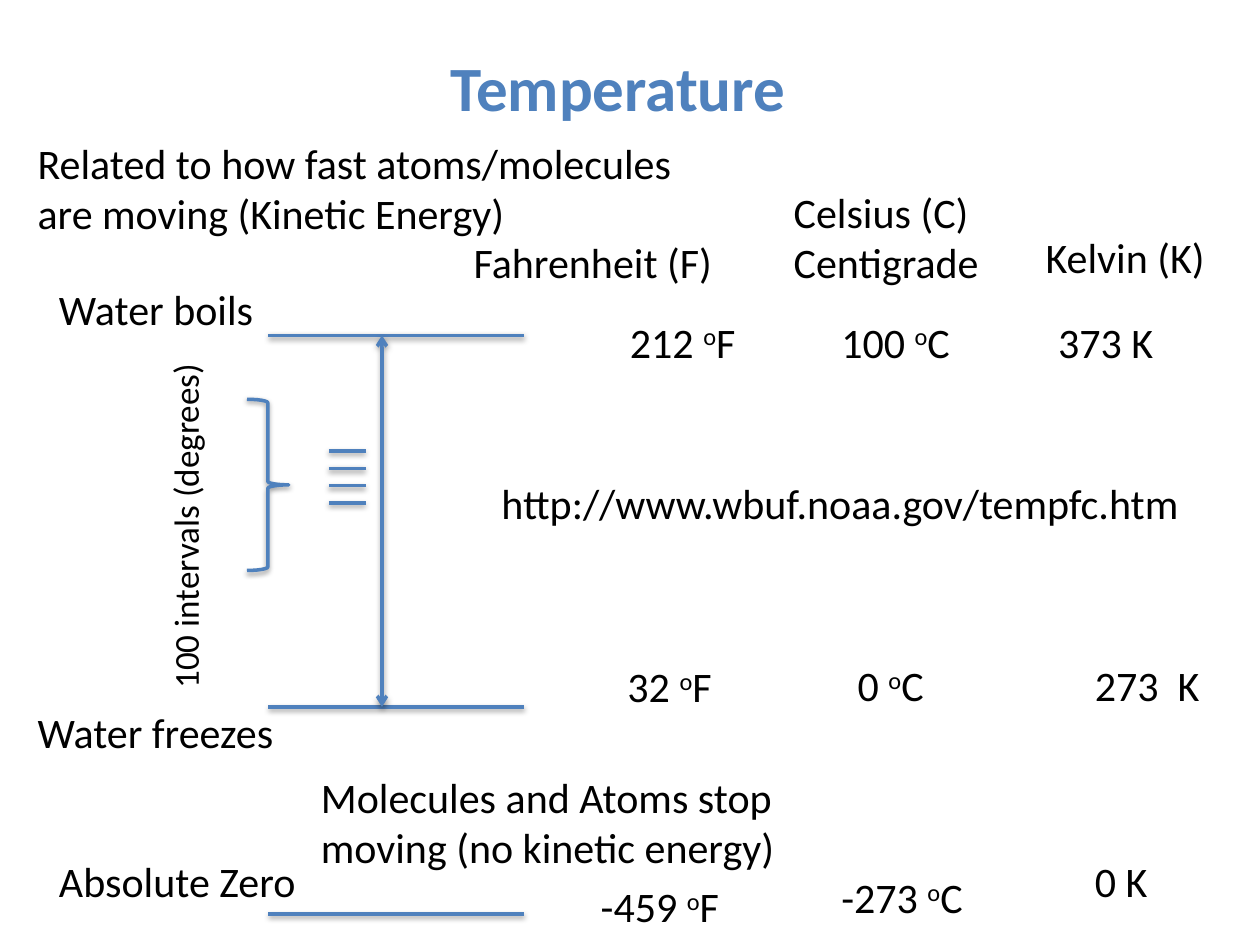
from pptx import Presentation
from pptx import util as u
from pptx.dml.color import RGBColor
from pptx.enum import shapes, text
from pptx.oxml import parse_xml
from pptx.oxml.ns import nsdecls

COLOURS = {"accent": "4F81BD", "ink": "000000", "shadow": "000000"}
FONT = "Calibri"
SCALE_LEFT, SCALE_RIGHT, SCALE_MIDDLE = 5.41, 10.57, 7.7
BOILING, FREEZING, ABSOLUTE_ZERO = 6.76, 14.25, 18.42
TICK_LEFT, TICK_RIGHT, FIRST_TICK, TICK_GAP = 6.63, 7.37, 9.09, 0.35

LABELS = [
    ("Celsius (C)\nCentigrade", 15.75, 3.63, 4.93),
    ("Kelvin (K)", 20.83, 4.55, 4.09),
    ("Fahrenheit (F)", 9.3, 4.65, 5.69),
    ("Water boils", 0.94, 5.59, 5.72),
    ("Water freezes", 0.51, 14.12, 5.72),
    ("Absolute Zero", 0.94, 17.12, 5.72),
    ("373 K", 21.08, 6.25, 3.07),
    ("273  K", 21.82, 13.18, 3.07),
    ("0 K", 21.82, 17.12, 3.07),
    ("http://www.wbuf.noaa.gov/tempfc.htm", 9.86, 9.5, 14.4),
    ("Molecules and Atoms stop moving (no kinetic energy)", 6.22, 15.42, 11.05),
    ("Related to how fast atoms/molecules are moving (Kinetic Energy)", 0.51, 2.64, 13.39),
]

DEGREE_READINGS = [
    ("212 ", "F", 12.45, 6.25, 2.79),
    ("100 ", "C", 16.71, 6.25, 2.87),
    ("32 ", "F", 12.4, 13.2, 2.36),
    ("0 ", "C", 17.04, 13.18, 2.06),
    ("-459 ", "F", 11.86, 17.63, 3.12),
    ("-273 ", "C", 16.71, 17.45, 3.12),
]


def write(paragraph, words, size=24, colour="ink", bold=False, raised=False):
    run = paragraph.add_run()
    run.text = words
    run.font.name = FONT
    run.font.size = u.Pt(size)
    run.font.bold = bold
    run.font.color.rgb = RGBColor.from_string(COLOURS[colour])
    if raised:
        run.font._element.set("baseline", "30000")


def add_title(slide, words):
    title = slide.shapes.title
    title.left, title.top, title.width, title.height = map(u.Cm, (8.71, 0.84, 7.49, 1.8))
    title.text_frame.word_wrap = False
    heading = title.text_frame.paragraphs[0]
    heading.alignment = text.PP_ALIGN.CENTER
    write(heading, words, size=36, colour="accent", bold=True)


def add_label(slide, words, left, top, width, height=1.27, size=24, unit=None, rotation=0):
    label = slide.shapes.add_textbox(*map(u.Cm, (left, top, width, height)))
    label.rotation = rotation
    frame = label.text_frame
    frame.word_wrap = True
    frame.auto_size = text.MSO_AUTO_SIZE.SHAPE_TO_FIT_TEXT
    for index, line in enumerate(words.split("\n")):
        paragraph = frame.add_paragraph() if index else frame.paragraphs[0]
        write(paragraph, line, size=size)
    if unit:
        write(paragraph, "o", size=size, raised=True)
        write(paragraph, unit, size=size)


def style_outline(shape):
    shape.line.color.rgb = RGBColor.from_string(COLOURS["accent"])
    shape.line.width = u.Pt(2)
    shape._element.spPr.append(parse_xml(
        f'<a:effectLst {nsdecls("a")}>'
        f'<a:outerShdw blurRad="{u.Pt(3.1)}" dist="{u.Pt(1.6)}" dir="5400000" rotWithShape="0">'
        f'<a:srgbClr val="{COLOURS["shadow"]}"><a:alpha val="38000"/></a:srgbClr>'
        '</a:outerShdw></a:effectLst>'))


def add_line(slide, x1, y1, x2, y2, arrows=False):
    line = slide.shapes.add_connector(
        shapes.MSO_CONNECTOR.STRAIGHT, *map(u.Cm, (x1, y1, x2, y2)))
    style_outline(line)
    if arrows:
        for end in ("headEnd", "tailEnd"):
            line.line._get_or_add_ln().append(
                parse_xml(f'<a:{end} {nsdecls("a")} type="arrow"/>'))


def add_brace(slide, left, top, width, height):
    brace = slide.shapes.add_shape(
        shapes.MSO_SHAPE.RIGHT_BRACE, *map(u.Cm, (left, top, width, height)))
    brace.fill.background()
    style_outline(brace)


def add_scale(slide):
    for level in (BOILING, FREEZING, ABSOLUTE_ZERO):
        add_line(slide, SCALE_LEFT, level, SCALE_RIGHT, level)
    add_line(slide, SCALE_MIDDLE, BOILING, SCALE_MIDDLE, FREEZING, arrows=True)
    for index in range(4):
        tick = FIRST_TICK + index * TICK_GAP
        add_line(slide, TICK_LEFT, tick, TICK_RIGHT, tick)
    add_brace(slide, 4.98, 8.05, 0.84, 3.45)
    add_label(slide, "100 intervals (degrees)", 0.03, 9.86, 7.42,
              height=1.12, size=20, rotation=270)


def main():
    deck = Presentation()
    deck.slide_width, deck.slide_height = u.Cm(25.4), u.Cm(19.05)
    slide = deck.slides.add_slide(deck.slide_layouts[5])
    add_title(slide, "Temperature")
    add_scale(slide)
    for words, left, top, width in LABELS:
        add_label(slide, words, left, top, width)
    for number, unit, left, top, width in DEGREE_READINGS:
        add_label(slide, number, left, top, width, unit=unit)
    deck.save("out.pptx")


if __name__ == "__main__":
    main()
